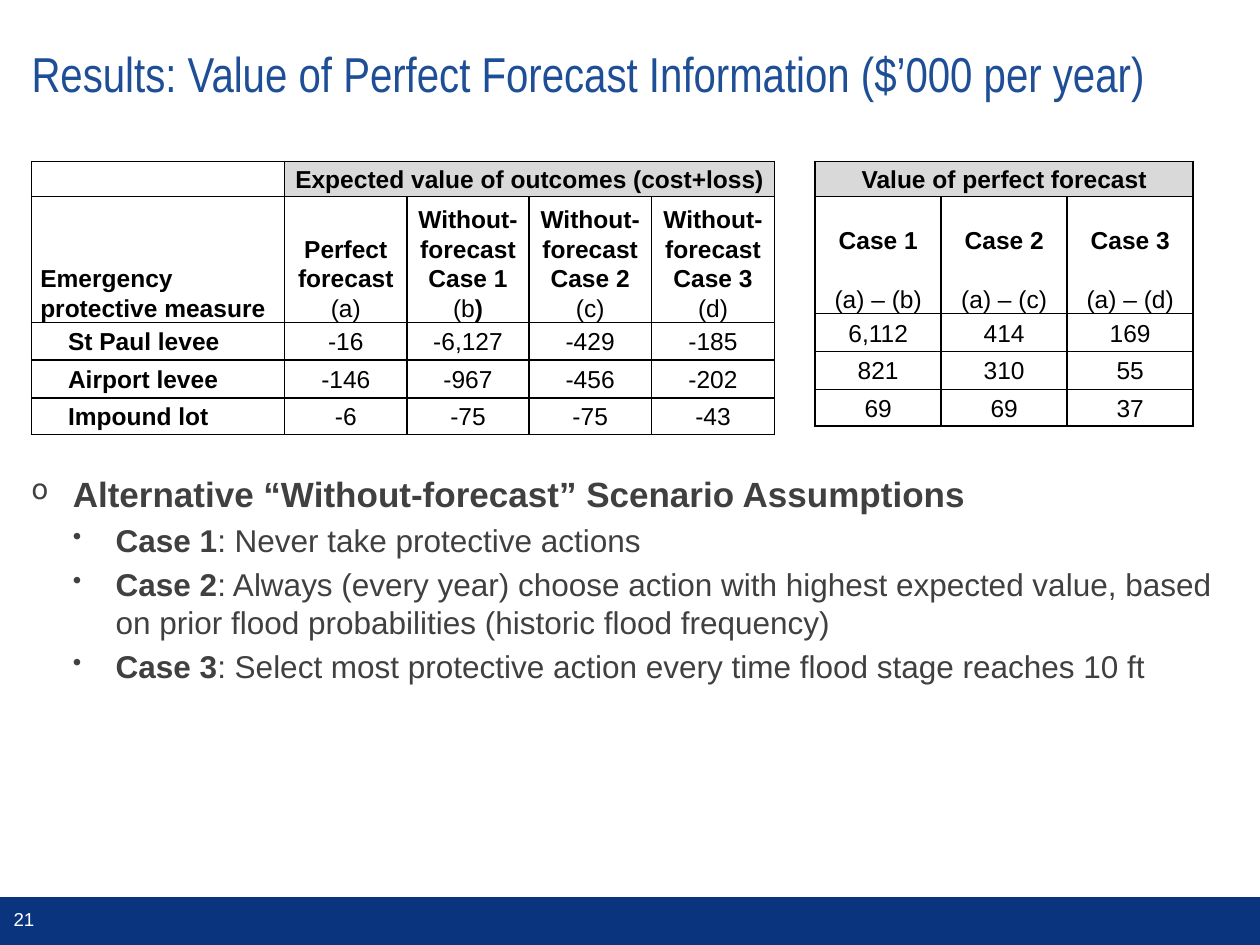
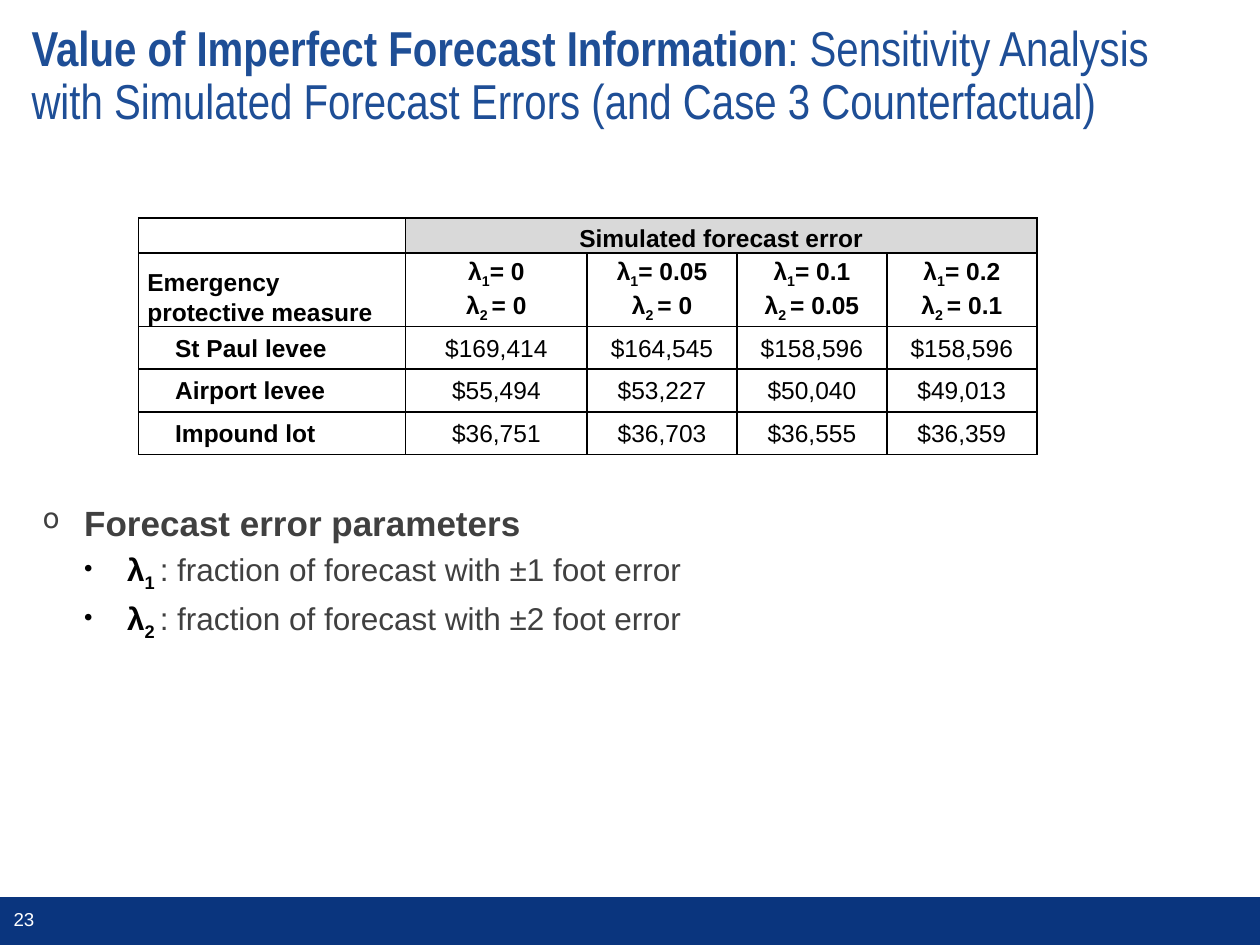
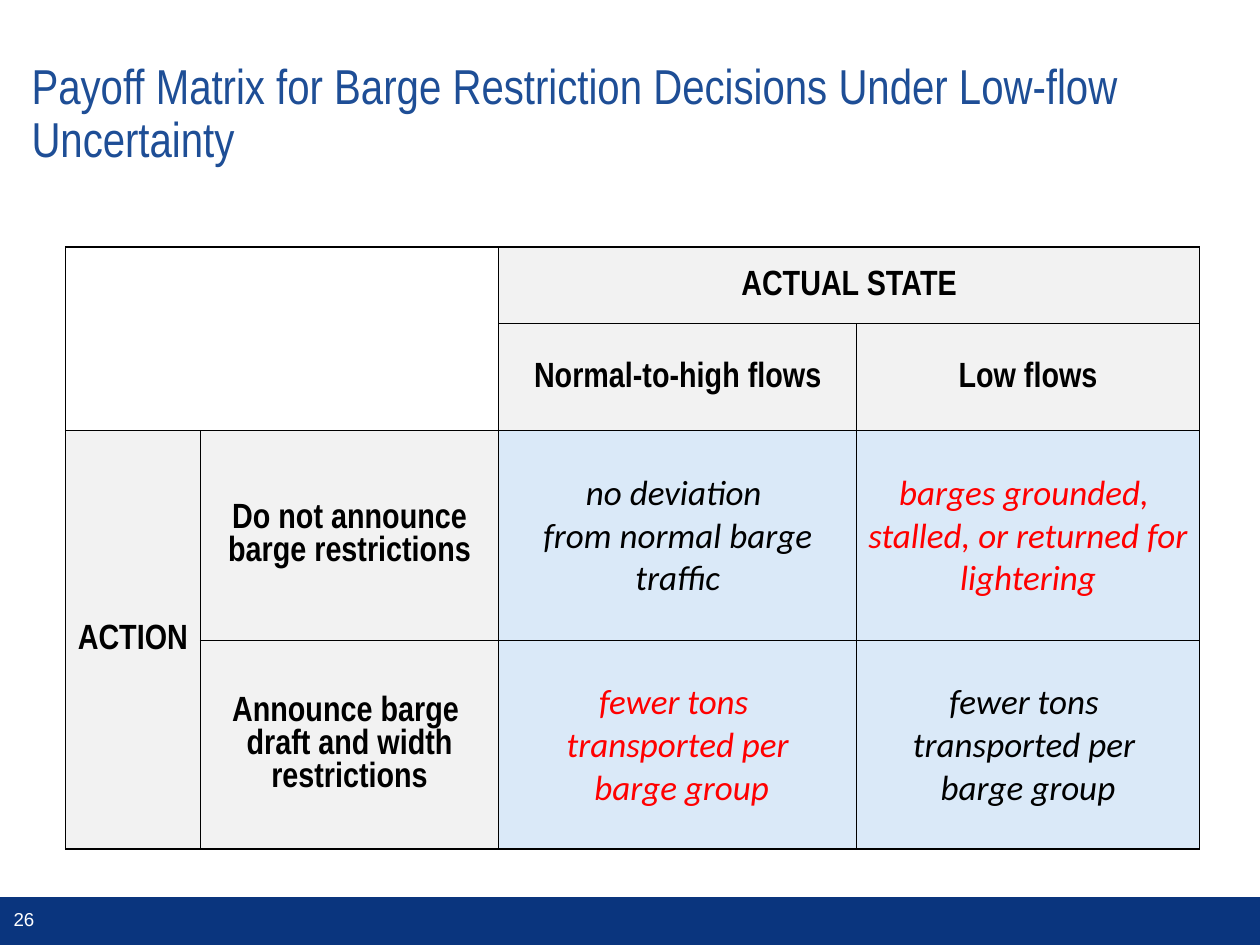
from dataclasses import dataclass, field

from lxml import etree
from pptx import Presentation
from pptx.dml.color import RGBColor
from pptx.enum.shapes import MSO_SHAPE
from pptx.enum.text import MSO_ANCHOR, MSO_AUTO_SIZE, PP_ALIGN
from pptx.oxml.ns import qn
from pptx.util import Inches, Pt

TOP, MIDDLE, BOTTOM = MSO_ANCHOR.TOP, MSO_ANCHOR.MIDDLE, MSO_ANCHOR.BOTTOM
LEFT, CENTER = PP_ALIGN.LEFT, PP_ALIGN.CENTER
TITLE_ONLY = 5
SLIDE_W, SLIDE_H = 10, 7.5


class Theme:
    navy, blue, text = "0A357E", "1E4E96", "404040"
    black, white, red = "000000", "FFFFFF", "FF0000"
    header, label, payoff = "D9D9D9", "F2F2F2", "DAE9F8"
    sans, narrow, humanist = "Arial", "Arial Narrow", "Calibri"
    title_size, lead_size, bullet_size, data_size = 28, 20, 18, 14
    matrix_size, number_size = 20, 10.7


@dataclass
class Span:
    text: str
    bold: bool = None
    sub: bool = False
    color: str = None


@dataclass
class Line:
    """One paragraph: its spans and the font they share."""
    spans: list
    bold: bool = False
    italic: bool = False
    color: str = Theme.black
    size: float = Theme.data_size
    font: str = Theme.sans
    spacing: float = 1
    before: float = 0


@dataclass
class Cell:
    """A table cell; open_sides names the sides (L, R, T, B) without a border."""
    lines: list = field(default_factory=lambda: [Line([])])
    fill: str = Theme.white
    anchor: int = MIDDLE
    align: int = CENTER
    indent: float = 0
    open_sides: str = ""


@dataclass
class Grid:
    left: float
    top: float
    cols: list
    rows: list
    cells: list
    merges: list
    margins: tuple = (0.07, 0)
    inner_line: float = 1


# Content

MEASURES = ["St Paul levee", "Airport levee", "Impound lot"]
DATA_SPACING = 1.07


def data_line(*spans, bold=False, before=0):
    return Line(list(spans), bold=bold, before=before, spacing=DATA_SPACING)


def bold(text):
    return data_line(Span(text), bold=True)


def plain(text, before=0):
    return data_line(Span(text), before=before)


def sub(text):
    return Span(text, sub=True)


def banner(text, anchor=MIDDLE):
    return Cell([bold(text)], Theme.header, anchor)


def header(*lines):
    return Cell(list(lines), anchor=BOTTOM)


def lambda_header(first, second):
    return Cell([data_line(Span("λ"), sub("1"), Span(f"= {first}\nλ"), sub("2 "),
                           Span(f"= {second}"), bold=True)])


def value_rows(rows):
    return [[Cell([plain(value)]) for value in row] for row in rows]


def with_measures(headers, values):
    """Put the column of protective measures before the headers and values."""
    corner = Cell([bold("Emergency protective measure")], anchor=BOTTOM, align=LEFT)
    names = [Cell([bold(name)], align=LEFT, indent=0.22) for name in MEASURES]
    return [[corner] + headers] + [[name] + row for name, row in zip(names, value_rows(values))]


outcome_headers = [
    header(bold("Perfect forecast"), plain("(a)")),
    header(bold("Without-\nforecast\nCase 1"), data_line(Span("(b"), Span(")", bold=True))),
    header(bold("Without-\nforecast\nCase 2"), plain("(c)")),
    header(bold("Without-\nforecast\nCase 3"), plain("(d)")),
]
outcomes = [["-16", "-6,127", "-429", "-185"],
            ["-146", "-967", "-456", "-202"],
            ["-6", "-75", "-75", "-43"]]
gain_headers = [header(bold(f"Case {number}"), plain(f"(a) – ({letter})", before=16.8))
                for number, letter in enumerate("bcd", 1)]
gains = [["6,112", "414", "169"], ["821", "310", "55"], ["69", "69", "37"]]
error_headers = [lambda_header(*pair) for pair in
                 [("0", "0"), ("0.05", "0"), ("0.1", "0.05"), ("0.2", "0.1")]]
error_values = [["$169,414", "$164,545", "$158,596", "$158,596"],
                ["$55,494", "$53,227", "$50,040", "$49,013"],
                ["$36,751", "$36,703", "$36,555", "$36,359"]]

RESULT_ROWS = [0.28, 0.93, 0.3, 0.3, 0.29]
outcome_grid = Grid(
    0.25, 1.28, [2.01] + [0.97] * 3 + [0.98], RESULT_ROWS,
    [[Cell(), banner("Expected value of outcomes (cost+loss)")]]
    + with_measures(outcome_headers, outcomes), [(0, 1, 0, 4)])
gain_grid = Grid(
    6.47, 1.28, [1] * 3, RESULT_ROWS,
    [[banner("Value of perfect forecast")], gain_headers] + value_rows(gains), [(0, 0, 0, 2)])
error_grid = Grid(
    1.1, 1.73, [2.12, 1.44] + [1.19] * 3, [0.28, 0.58] + [0.34] * 3,
    [[Cell(), banner("Simulated forecast error", BOTTOM)]]
    + with_measures(error_headers, error_values), [(0, 1, 0, 4)])


def matrix_label(*texts):
    return Cell([Line([Span(text)], bold=True, size=Theme.matrix_size, font=Theme.narrow)
                 for text in texts], Theme.label)


def payoff(color, *texts):
    return Cell([Line([Span(text)], italic=True, color=color, size=Theme.matrix_size,
                      font=Theme.humanist) for text in texts], Theme.payoff)


payoff_grid = Grid(
    0.52, 1.96, [1.07, 2.37, 2.84, 2.72], [0.61, 0.85, 1.66, 1.66],
    [[Cell(open_sides="RB"), Cell(open_sides="LB"), matrix_label("ACTUAL STATE")],
     [Cell(open_sides="RT"), Cell(open_sides="LT"),
      matrix_label("Normal-to-high flows"), matrix_label("Low flows")],
     [matrix_label("ACTION"), matrix_label("Do not announce barge restrictions"),
      payoff(Theme.black, "no deviation ", "from normal barge traffic"),
      payoff(Theme.red, "barges grounded, ", "stalled, or returned for lightering")],
     [Cell(), matrix_label("Announce barge ", "draft and width restrictions"),
      payoff(Theme.red, "fewer tons ", "transported per", " barge group"),
      payoff(Theme.black, "fewer tons ", "transported per ", "barge group")]],
    [(0, 2, 0, 3), (2, 0, 3, 0)], margins=(0.01, 0.01), inner_line=0.5)

scenarios = ("Alternative “Without-forecast” Scenario Assumptions", [
    [Span(f"Case {number}", bold=True), Span(f": {rule}")] for number, rule in enumerate([
        "Never take protective actions",
        "Always (every year) choose action with highest expected value, "
        "based on prior flood probabilities (historic flood frequency)",
        "Select most protective action every time flood stage reaches 10 ft"], 1)])
parameters = ("Forecast error parameters", [
    [Span("λ", bold=True, color=Theme.black),
     Span(f"{number} ", bold=True, sub=True, color=Theme.black),
     Span(f": fraction of forecast with ±{number} foot error")] for number in (1, 2)])

PAGES = [
    dict(number=21, title_height=0.82, grids=[outcome_grid, gain_grid],
         title=[Span("Results: Value of Perfect Forecast Information ($’000 per year)")],
         bullets=scenarios, bullet_area=(0.15, 3.7, 9.67, 2.04)),
    dict(number=23, title_height=0.82, grids=[error_grid],
         title=[Span("Value of Imperfect Forecast Information", bold=True),
                Span(": Sensitivity Analysis with Simulated Forecast Errors "
                     "(and Case 3 Counterfactual)")],
         bullets=parameters, bullet_area=(0.24, 3.93, 9.67, 1.49)),
    dict(number=26, title_height=1.42, grids=[payoff_grid],
         title=[Span("Payoff Matrix for Barge Restriction Decisions "
                     "Under Low-flow Uncertainty")]),
]


# Drawing

def inches(*lengths):
    return [Inches(length) for length in lengths]


def rgb(code):
    return RGBColor.from_string(code)


def add_break(para, size):
    """Add a line break whose height follows the text size."""
    para.add_line_break()
    line_break = para._p.findall(qn("a:br"))[-1]
    etree.SubElement(line_break, qn("a:rPr")).set("sz", str(round(size * 100)))


def write_line(para, line, align=LEFT):
    para.alignment = align
    para.line_spacing = line.spacing
    para.space_before = Pt(line.before)
    font = para.font
    font.name, font.size = line.font, Pt(line.size)
    font.bold, font.italic = line.bold, line.italic
    font.color.rgb = rgb(line.color)
    for item in line.spans:
        for index, piece in enumerate(item.text.split("\n")):
            if index:
                add_break(para, line.size)
            span = para.add_run()
            span.text = piece
            if item.bold is not None:
                span.font.bold = item.bold
            if item.color:
                span.font.color.rgb = rgb(item.color)
            if item.sub:
                span._r.get_or_add_rPr().set("baseline", "-25000")


def paragraphs(frame, count):
    return [frame.paragraphs[0]] + [frame.add_paragraph() for _ in range(count - 1)]


def add_bullet(para, symbol, indent, hanging):
    properties = para._p.get_or_add_pPr()
    properties.set("marL", str(Inches(indent)))
    properties.set("indent", str(-Inches(hanging)))
    etree.SubElement(properties, qn("a:buSzPct")).set("val", "80000")
    etree.SubElement(properties, qn("a:buChar")).set("char", symbol)


def add_text_box(page, area, anchor=TOP):
    box = page.shapes.add_textbox(*inches(*area))
    frame = box.text_frame
    frame.word_wrap = True
    frame.vertical_anchor = anchor
    return frame


def add_bullets(page, area, lead, points):
    paras = paragraphs(add_text_box(page, area), len(points) + 1)
    add_bullet(paras[0], "o", 0.33, 0.33)
    write_line(paras[0], Line([Span(lead)], bold=True, color=Theme.text, size=Theme.lead_size))
    for para, spans in zip(paras[1:], points):
        para.level = 1
        add_bullet(para, "•", 0.67, 0.34)
        write_line(para, Line(spans, color=Theme.text, size=Theme.bullet_size,
                              before=0.2 * Theme.bullet_size))


def set_borders(cell, widths, open_sides):
    """Draw the left, right, top and bottom lines, which come before the fill."""
    properties = cell._tc.get_or_add_tcPr()
    for index, (side, width) in enumerate(zip("LRTB", widths)):
        border = etree.Element(qn(f"a:ln{side}"), w=str(Pt(width)))
        if side in open_sides:
            etree.SubElement(border, qn("a:noFill"))
        else:
            fill = etree.SubElement(border, qn("a:solidFill"))
            etree.SubElement(fill, qn("a:srgbClr")).set("val", Theme.black)
        properties.insert(index, border)


def add_grid(page, grid):
    frame = page.shapes.add_table(len(grid.rows), len(grid.cols), *inches(
        grid.left, grid.top, sum(grid.cols), sum(grid.rows)))
    table = frame.table
    table.first_row = table.horz_banding = False
    for column, width in zip(table.columns, grid.cols):
        column.width = Inches(width)
    for row, height in zip(table.rows, grid.rows):
        row.height = Inches(height)
    for top, left, bottom, right in grid.merges:
        table.cell(top, left).merge(table.cell(bottom, right))

    side, upper = grid.margins
    for row in range(len(grid.rows)):
        for col in range(len(grid.cols)):
            cell = table.cell(row, col)
            content = grid.cells[row][col] if col < len(grid.cells[row]) else Cell()
            cell.fill.solid()
            cell.fill.fore_color.rgb = rgb(content.fill)
            at_edge = (col == 0, col + cell.span_width == len(grid.cols),
                       row == 0, row + cell.span_height == len(grid.rows))
            set_borders(cell, [1 if edge else grid.inner_line for edge in at_edge],
                        content.open_sides)
            cell.margin_left, cell.margin_right = inches(side + content.indent, side)
            cell.margin_top, cell.margin_bottom = inches(upper, 0)
            cell.vertical_anchor = content.anchor
            if not cell.is_spanned:
                paras = paragraphs(cell.text_frame, len(content.lines))
                for para, line in zip(paras, content.lines):
                    write_line(para, line, content.align)


def add_title(page, spans, height):
    title = page.shapes.title
    title.left, title.top, title.width, title.height = inches(0.15, 0.2, 9.67, height)
    frame = title.text_frame
    frame.auto_size = MSO_AUTO_SIZE.NONE
    frame.word_wrap = True
    frame.vertical_anchor = MIDDLE
    frame.margin_left = frame.margin_top = frame.margin_bottom = Inches(0.1)
    frame.margin_right = Inches(0.2)
    write_line(frame.paragraphs[0], Line(spans, color=Theme.blue, size=Theme.title_size,
                                         font=Theme.narrow, spacing=0.9))


def add_page_number(page, number):
    frame = add_text_box(page, (0, 7.13, 0.38, 0.32), MIDDLE)
    write_line(frame.paragraphs[0], Line([Span(str(number))], color=Theme.white,
                                         size=Theme.number_size), CENTER)


def move_band_to_layout(page):
    """Draw the footer band once, on the layout that all pages use."""
    band = page.shapes.add_shape(MSO_SHAPE.RECTANGLE, *inches(0, 7.12, SLIDE_W, SLIDE_H - 7.12))
    band.shadow.inherit = False
    band.fill.solid()
    band.fill.fore_color.rgb = rgb(Theme.navy)
    band.line.fill.background()
    page.slide_layout.shapes.element.append(band.element)


def main():
    deck = Presentation()
    deck.slide_width, deck.slide_height = inches(SLIDE_W, SLIDE_H)
    layout = deck.slide_layouts[TITLE_ONLY]
    for index, content in enumerate(PAGES):
        page = deck.slides.add_slide(layout)
        if index == 0:
            move_band_to_layout(page)
        add_title(page, content["title"], content["title_height"])
        add_page_number(page, content["number"])
        for grid in content["grids"]:
            add_grid(page, grid)
        if "bullets" in content:
            add_bullets(page, content["bullet_area"], *content["bullets"])
    deck.save("out.pptx")


if __name__ == "__main__":
    main()
